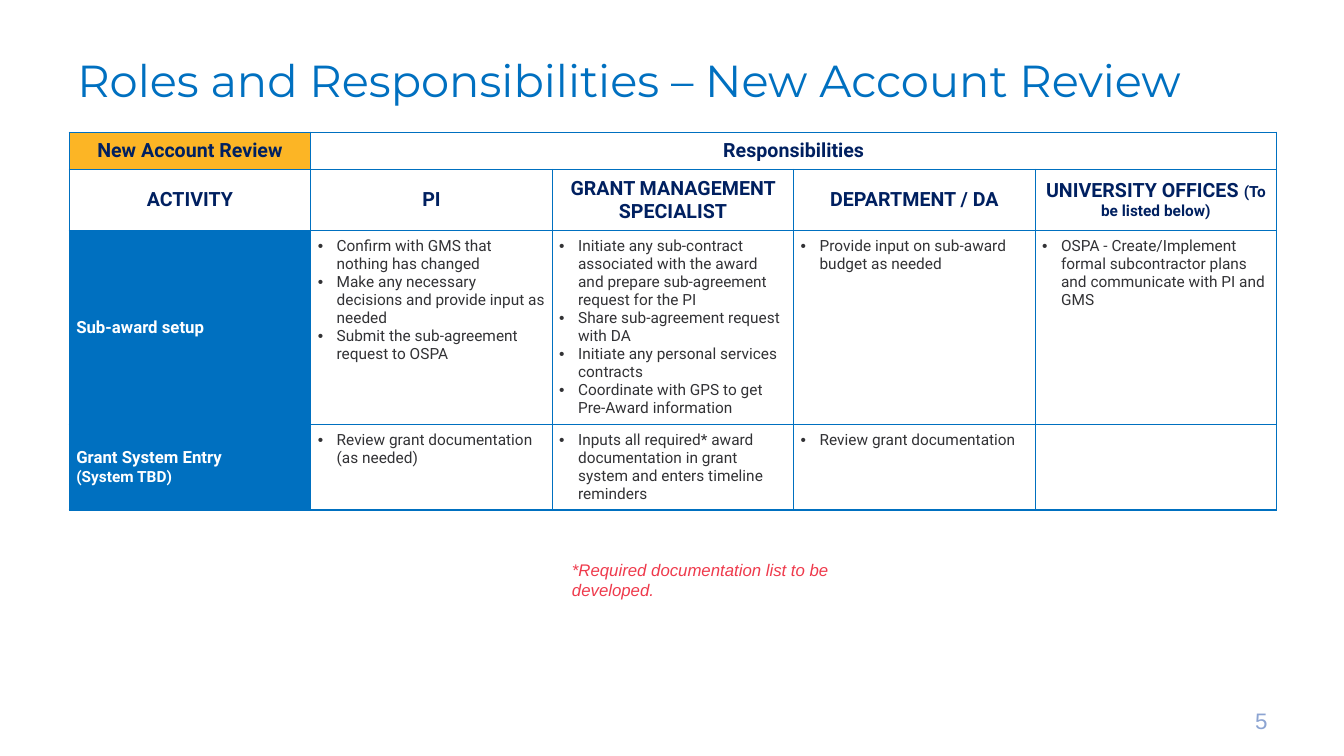
"""Build the New Account Review roles and responsibilities slide."""
from dataclasses import dataclass
from typing import Optional

from lxml.etree import SubElement
from pptx import Presentation
from pptx.dml.color import RGBColor
from pptx.enum.text import MSO_ANCHOR, MSO_AUTO_SIZE, PP_ALIGN
from pptx.oxml import parse_xml
from pptx.oxml.ns import nsdecls, qn
from pptx.util import Pt

BLUE = RGBColor(0x00, 0x70, 0xC0)
NAVY = RGBColor(0x00, 0x20, 0x60)
GOLD = RGBColor(0xFC, 0xB5, 0x25)
WHITE = RGBColor(0xFF, 0xFF, 0xFF)
INK = RGBColor(0x32, 0x32, 0x35)
RED = RGBColor(0xEF, 0x3A, 0x4C)
PALE_BLUE = RGBColor(0x8C, 0xA4, 0xD2)

NOTE_SIZE = 11
COLUMN_WIDTH = 172.5
ROW_HEIGHTS = (26.5, 43.5, 137.5, 61)
CELL_MARGIN = 5
BULLET_INDENT = 13.5


@dataclass(frozen=True)
class CellStyle:
    size: float
    color: RGBColor
    fill: Optional[RGBColor]
    bold: bool = True
    align: PP_ALIGN = PP_ALIGN.LEFT
    anchor: MSO_ANCHOR = MSO_ANCHOR.MIDDLE
    bullet: bool = False


@dataclass(frozen=True)
class Label:
    text: str
    left: float
    top: float
    width: float
    height: float
    size: float
    color: RGBColor
    align: PP_ALIGN = PP_ALIGN.LEFT
    anchor: MSO_ANCHOR = MSO_ANCHOR.TOP
    italic: bool = False


CORNER = CellStyle(14, NAVY, GOLD, align=PP_ALIGN.CENTER)
HEADING = CellStyle(14, NAVY, None, align=PP_ALIGN.CENTER)
ACTIVITY = CellStyle(12, WHITE, BLUE)
DUTIES = CellStyle(NOTE_SIZE, INK, WHITE, bold=False, anchor=MSO_ANCHOR.TOP, bullet=True)

ROWS: list[list[list[str]]] = [
    [["New Account Review"], ["Responsibilities"], [], [], []],
    [
        ["ACTIVITY"],
        ["PI"],
        ["GRANT MANAGEMENT SPECIALIST"],
        ["DEPARTMENT / DA"],
        ["UNIVERSITY OFFICES (To be listed below)"],
    ],
    [
        ["Sub-award setup"],
        [
            "Confirm with GMS that nothing has changed",
            "Make any necessary decisions and provide input as needed",
            "Submit the sub-agreement request to OSPA",
        ],
        [
            "Initiate any sub-contract associated with the award and prepare "
            "sub-agreement request for the PI",
            "Share sub-agreement request with DA",
            "Initiate any personal services contracts",
            "Coordinate with GPS to get Pre-Award information",
        ],
        ["Provide input on sub-award budget as needed"],
        ["OSPA - Create/Implement formal subcontractor plans and communicate with PI and GMS"],
    ],
    [
        ["Grant System Entry", "(System TBD)"],
        ["Review grant documentation (as needed)"],
        ["Inputs all required* award documentation in grant system and enters timeline reminders"],
        ["Review grant documentation"],
        [],
    ],
]

LABELS = [
    Label("5", 688.5, 500.5, 224, 28.5, 16, PALE_BLUE, PP_ALIGN.RIGHT, MSO_ANCHOR.MIDDLE),
    Label("*Required documentation list to be developed.", 401.5, 396.5, 255, 36, 12, RED,
          italic=True),
]


def style_for(row: int, col: int) -> CellStyle:
    """Pick the cell style from its place in the grid."""
    if row < 2:
        return CORNER if row == col == 0 else HEADING
    return ACTIVITY if col == 0 else DUTIES


def add_bullet(p) -> None:
    """Give a paragraph a hanging round bullet."""
    pPr = p._p.get_or_add_pPr()
    pPr.set("marL", str(Pt(BULLET_INDENT)))
    pPr.set("indent", str(-Pt(BULLET_INDENT)))
    SubElement(pPr, qn("a:buFont")).set("typeface", "Arial")
    SubElement(pPr, qn("a:buChar")).set("char", "•")


def add_borders(cell) -> None:
    """Draw a thin blue line on all four sides of a cell."""
    tcPr = cell._tc.get_or_add_tcPr()
    for i, side in enumerate(("lnL", "lnR", "lnT", "lnB")):
        tcPr.insert(i, parse_xml(
            f'<a:{side} {nsdecls("a")} w="{Pt(1)}"><a:solidFill>'
            f'<a:srgbClr val="{BLUE}"/></a:solidFill></a:{side}>'))


def fill_cell(cell, lines: list[str], style: CellStyle) -> None:
    """Write the lines of a cell, with bracketed notes in the smaller size."""
    cell.margin_left = cell.margin_right = Pt(CELL_MARGIN)
    cell.margin_top = cell.margin_bottom = Pt(CELL_MARGIN)
    cell.vertical_anchor = style.anchor
    if style.fill is None:
        cell.fill.background()
    else:
        cell.fill.solid()
        cell.fill.fore_color.rgb = style.fill
    add_borders(cell)
    tf = cell.text_frame
    tf.text = "\n".join(lines)
    for p, line in zip(tf.paragraphs, lines):
        main, bracket, note = line.partition("(")
        p.text = main
        if bracket:
            p.add_run().text = bracket + note
        p.alignment = style.align
        if style.bullet:
            add_bullet(p)
        for r in p.runs:
            r.font.name = "Roboto"
            r.font.size = Pt(NOTE_SIZE if r.text.startswith("(") else style.size)
            r.font.bold = style.bold
            r.font.color.rgb = style.color


def add_title(s) -> None:
    """Place and format the title placeholder."""
    title = s.shapes.title
    title.left, title.top, title.width, title.height = Pt(48), Pt(25.5), Pt(945.5), Pt(52.5)
    tf = title.text_frame
    tf.text = "Roles and Responsibilities – New Account Review"
    tf.auto_size = MSO_AUTO_SIZE.NONE
    tf.vertical_anchor = MSO_ANCHOR.TOP
    p = tf.paragraphs[0]
    p.alignment = PP_ALIGN.LEFT
    p.line_spacing = Pt(47.2)
    font = p.runs[0].font
    font.name, font.size, font.color.rgb = "Montserrat", Pt(32), BLUE


def add_roles_table(s) -> None:
    """Add the table of activities and responsibilities."""
    columns = len(ROWS[0])
    table = s.shapes.add_table(len(ROWS), columns, Pt(49.5), Pt(94.5),
                               Pt(COLUMN_WIDTH * columns), Pt(sum(ROW_HEIGHTS))).table
    table.first_row = table.horz_banding = False
    for column in table.columns:
        column.width = Pt(COLUMN_WIDTH)
    for row, height in zip(table.rows, ROW_HEIGHTS):
        row.height = Pt(height)
    for i, cells in enumerate(ROWS):
        for j, lines in enumerate(cells):
            fill_cell(table.cell(i, j), lines, style_for(i, j))
    table.cell(0, 1).merge(table.cell(0, columns - 1))


def add_label(s, label: Label) -> None:
    """Add one text box."""
    box = s.shapes.add_textbox(Pt(label.left), Pt(label.top), Pt(label.width), Pt(label.height))
    tf = box.text_frame
    tf.word_wrap = True
    tf.vertical_anchor = label.anchor
    tf.text = label.text
    p = tf.paragraphs[0]
    p.alignment = label.align
    font = p.runs[0].font
    font.name, font.size, font.italic = "Arial", Pt(label.size), label.italic
    font.color.rgb = label.color


def main() -> None:
    """Build and save the slide."""
    prs = Presentation()
    prs.slide_width, prs.slide_height = Pt(960), Pt(540)
    s = prs.slides.add_slide(prs.slide_layouts[5])
    add_title(s)
    add_roles_table(s)
    for label in LABELS:
        add_label(s, label)
    prs.save("out.pptx")


if __name__ == "__main__":
    main()
